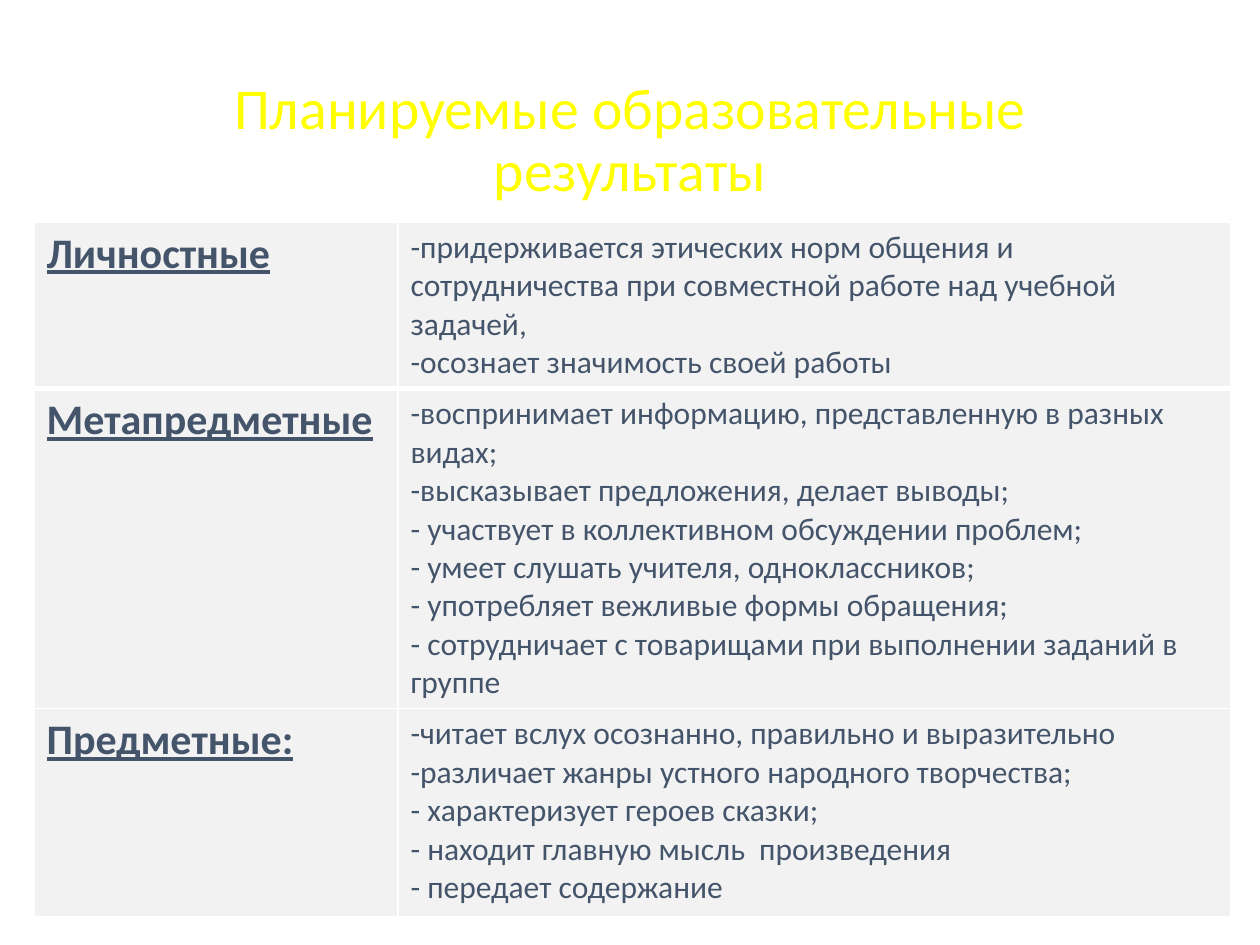
from lxml import etree
from pptx import Presentation
from pptx.dml.color import RGBColor
from pptx.enum.text import MSO_ANCHOR, PP_ALIGN
from pptx.oxml.ns import qn
from pptx.util import Pt

CENTER = PP_ALIGN.CENTER
MIDDLE = MSO_ANCHOR.MIDDLE
PX = 914400 // 126
FONT = "Calibri"
WHITE, YELLOW, SLATE, PALE = "FFFFFF", "FFFF00", "44546A", "F2F2F2"

TITLE = "Планируемые образовательные результаты"
COLS = (364, 833)
ROWS = [
    (154, "Личностные", [
        "-придерживается этических норм общения и сотрудничества "
        "при совместной работе над учебной задачей,",
        "-осознает значимость своей работы",
    ], 0),
    (297, "Метапредметные", [
        "-воспринимает информацию, представленную в разных видах;",
        "-высказывает предложения, делает выводы;",
        "- участвует в коллективном обсуждении проблем;",
        "- умеет слушать учителя, одноклассников;",
        "- употребляет вежливые формы обращения;",
        "- сотрудничает с товарищами при выполнении заданий в группе",
    ], 0),
    (208, "Предметные:", [
        "читает вслух осознанно, правильно и выразительно",
        "различает жанры устного народного творчества;",
        "- характеризует героев сказки;",
        "- находит главную мысль  произведения",
        "- передает содержание",
    ], 2),
]


def px(n):
    """Turn pixels into EMU."""
    return n * PX


def rgb(code):
    """Turn a hex string into a colour."""
    return RGBColor.from_string(code)


def add_dash(para):
    """Give a paragraph a dash bullet without indent."""
    props = para._p.get_or_add_pPr()
    props.set("marL", "0")
    props.set("indent", "0")
    etree.SubElement(props, qn("a:buFont")).set("typeface", FONT)
    etree.SubElement(props, qn("a:buChar")).set("char", "-")


def put_text(frame, lines, size=18, color=SLATE, bold=False, under=False,
             align=None, spacing=None, dashes=0):
    """Write lines as paragraphs, with the first few bulleted."""
    for i, line in enumerate(lines):
        para = frame.add_paragraph() if i else frame.paragraphs[0]
        if align is not None:
            para.alignment = align
        if spacing is not None:
            para.line_spacing = spacing
        if i < dashes:
            add_dash(para)
        run = para.add_run()
        run.text = line
        font = run.font
        font.name, font.size = FONT, Pt(size)
        font.bold, font.underline = bold, under
        font.color.rgb = rgb(color)


def set_edges(cell, top, bottom):
    """Draw white cell borders with the given top and bottom widths."""
    props = cell._tc.get_or_add_tcPr()
    for side, width in (("L", 1), ("R", 1), ("T", top), ("B", bottom)):
        line = etree.SubElement(props, qn("a:ln" + side), w=str(Pt(width)))
        fill = etree.SubElement(line, qn("a:solidFill"))
        etree.SubElement(fill, qn("a:srgbClr"), val=WHITE)


def add_title(slide):
    """Place and fill the title."""
    title = slide.shapes.title
    title.left, title.top = px(87), px(50)
    title.width, title.height = px(1086), px(183)
    frame = title.text_frame
    frame.word_wrap = True
    frame.vertical_anchor = MIDDLE
    put_text(frame, [TITLE], size=33, color=YELLOW, align=CENTER, spacing=0.9)


def add_grid(slide):
    """Add the table of results."""
    high = sum(row[0] for row in ROWS)
    table = slide.shapes.add_table(len(ROWS), len(COLS), px(34), px(222),
                                   px(sum(COLS)), px(high)).table
    table.first_row = table.horz_banding = False
    for col, width in zip(table.columns, COLS):
        col.width = px(width)
    for i, (height, name, lines, dashes) in enumerate(ROWS):
        row = table.rows[i]
        row.height = px(height)
        head, body = row.cells
        for cell in (head, body):
            set_edges(cell, 3 if i == 1 else 1, 3 if i == 0 else 1)
            cell.fill.solid()
            cell.fill.fore_color.rgb = rgb(PALE)
        put_text(head.text_frame, [name], size=24, bold=True, under=True)
        put_text(body.text_frame, lines, dashes=dashes)


def main():
    """Build and save the slide."""
    deck = Presentation()
    deck.slide_width, deck.slide_height = px(1260), px(945)
    slide = deck.slides.add_slide(deck.slide_layouts[5])
    add_title(slide)
    add_grid(slide)
    deck.save("out.pptx")


if __name__ == "__main__":
    main()
